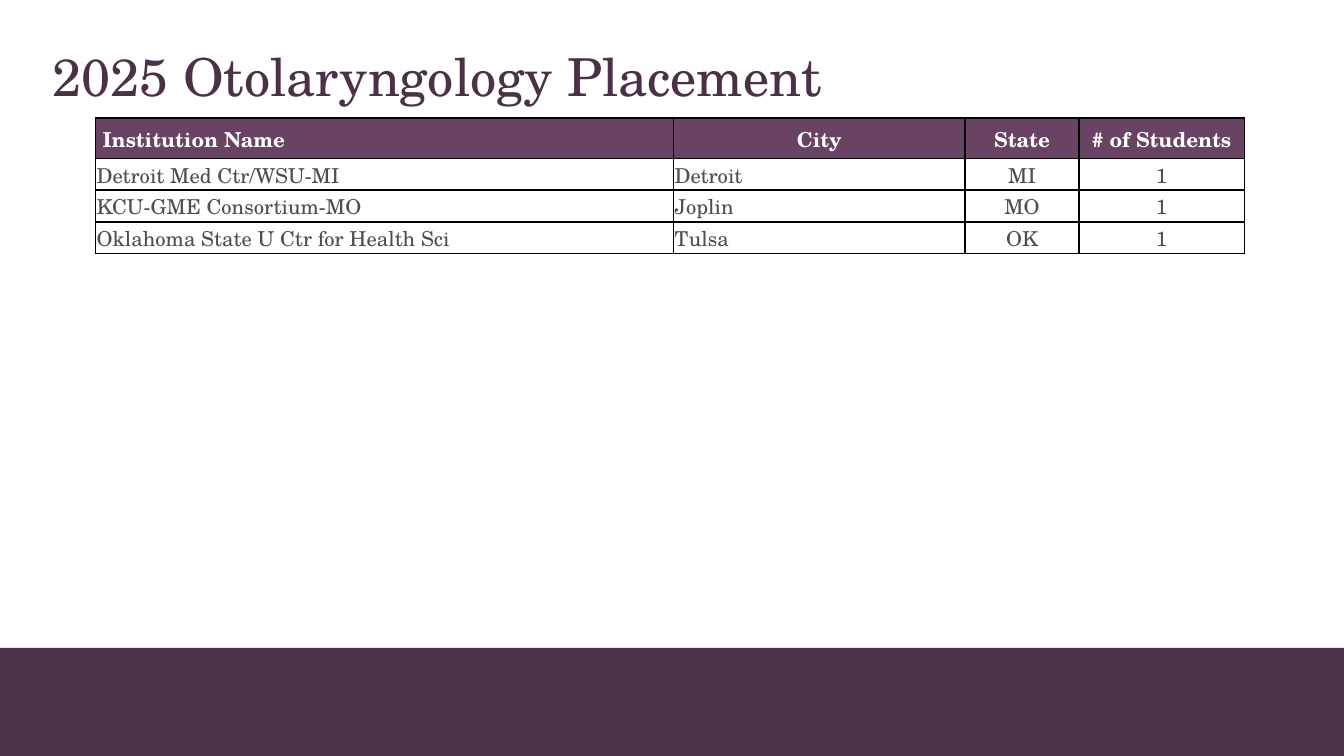
import pptx
import pptx.dml.color
import pptx.enum.shapes
import pptx.enum.text
import pptx.oxml
import pptx.oxml.ns
import pptx.util

RGBColor = pptx.dml.color.RGBColor
Inches = pptx.util.Inches
Pt = pptx.util.Pt
ALIGN = pptx.enum.text.PP_ALIGN
ANCHOR = pptx.enum.text.MSO_ANCHOR

PLUM = RGBColor(0x4B, 0x30, 0x48)
MAUVE = RGBColor(0x69, 0x43, 0x64)
SLATE = RGBColor(0x4B, 0x4F, 0x54)
WHITE = RGBColor(0xFF, 0xFF, 0xFF)
BLACK = RGBColor(0, 0, 0)
FONT = "TeX Gyre Schola"

TITLE_BOX = (0.29, 0.27, 9, 0.59)
TABLE_BOX = (0.71, 0.88, 8.55, 0.9)
BAND_BOX = (-0.06, 4.82, 10.12, 0.81)
COLUMN_SHARES = (0.503, 0.254, 0.099, 0.144)
ROW_SHARES = (3 / 9, 2 / 9, 2 / 9, 2 / 9)

HEADINGS = (" Institution Name", "City", "State", "# of Students")
PLACEMENTS = (
    ("Detroit Med Ctr/WSU-MI", "Detroit", "MI", "1"),
    ("KCU-GME Consortium-MO", "Joplin", "MO", "1"),
    ("Oklahoma State U Ctr for Health Sci", "Tulsa", "OK", "1"),
)


def style_paragraph(para, size, color, bold, align):
    para.alignment = align
    para.font.name = FONT
    para.font.size = Pt(size)
    para.font.bold = bold
    para.font.color.rgb = color


def place_band(page, box):
    band = page.shapes.add_shape(
        pptx.enum.shapes.MSO_SHAPE.RECTANGLE, *map(Inches, box))
    band.shadow.inherit = False
    band.fill.solid()
    band.fill.fore_color.rgb = PLUM
    band.line.fill.background()


def place_title(page, box, text):
    title = page.shapes.title
    title.left, title.top, title.width, title.height = map(Inches, box)
    frame = title.text_frame
    frame.text = text
    frame.vertical_anchor = ANCHOR.MIDDLE
    style_paragraph(frame.paragraphs[0], 28, PLUM, False, ALIGN.LEFT)


def border_cell(cell, width, color):
    properties = cell._tc.get_or_add_tcPr()
    for side in ("lnL", "lnR", "lnT", "lnB"):
        properties.append(pptx.oxml.parse_xml(
            f'<a:{side} {pptx.oxml.ns.nsdecls("a")} w="{Pt(width)}">'
            f'<a:solidFill><a:srgbClr val="{color}"/></a:solidFill></a:{side}>'))


def fill_cell(cell, text, row, column):
    heading = row == 0
    border_cell(cell, 1, BLACK)
    if heading:
        cell.fill.solid()
        cell.fill.fore_color.rgb = MAUVE
    else:
        cell.fill.background()
    cell.margin_left = cell.margin_right = cell.margin_top = Inches(0.01)
    cell.margin_bottom = 0
    middle = heading or column == 1
    cell.vertical_anchor = ANCHOR.MIDDLE if middle else ANCHOR.BOTTOM
    cell.text = text
    centred = column >= (1 if heading else 2)
    style_paragraph(cell.text_frame.paragraphs[0], 11,
                    WHITE if heading else SLATE, heading,
                    ALIGN.CENTER if centred else ALIGN.LEFT)


def place_table(page, box, records):
    left, top, width, height = map(Inches, box)
    table = page.shapes.add_table(
        len(records), len(records[0]), left, top, width, height).table
    table.horz_banding = False
    for column, share in zip(table.columns, COLUMN_SHARES):
        column.width = int(width * share)
    for row, share in zip(table.rows, ROW_SHARES):
        row.height = int(height * share)
    for row, record in enumerate(records):
        for column, text in enumerate(record):
            fill_cell(table.cell(row, column), text, row, column)


def main():
    deck = pptx.Presentation()
    deck.slide_width = Inches(10)
    deck.slide_height = deck.slide_width * 9 // 16
    page = deck.slides.add_slide(deck.slide_layouts.get_by_name("Title Only"))
    place_band(page, BAND_BOX)
    place_title(page, TITLE_BOX, "2025 Otolaryngology Placement")
    place_table(page, TABLE_BOX, (HEADINGS, *PLACEMENTS))
    deck.save("out.pptx")


if __name__ == "__main__":
    main()
